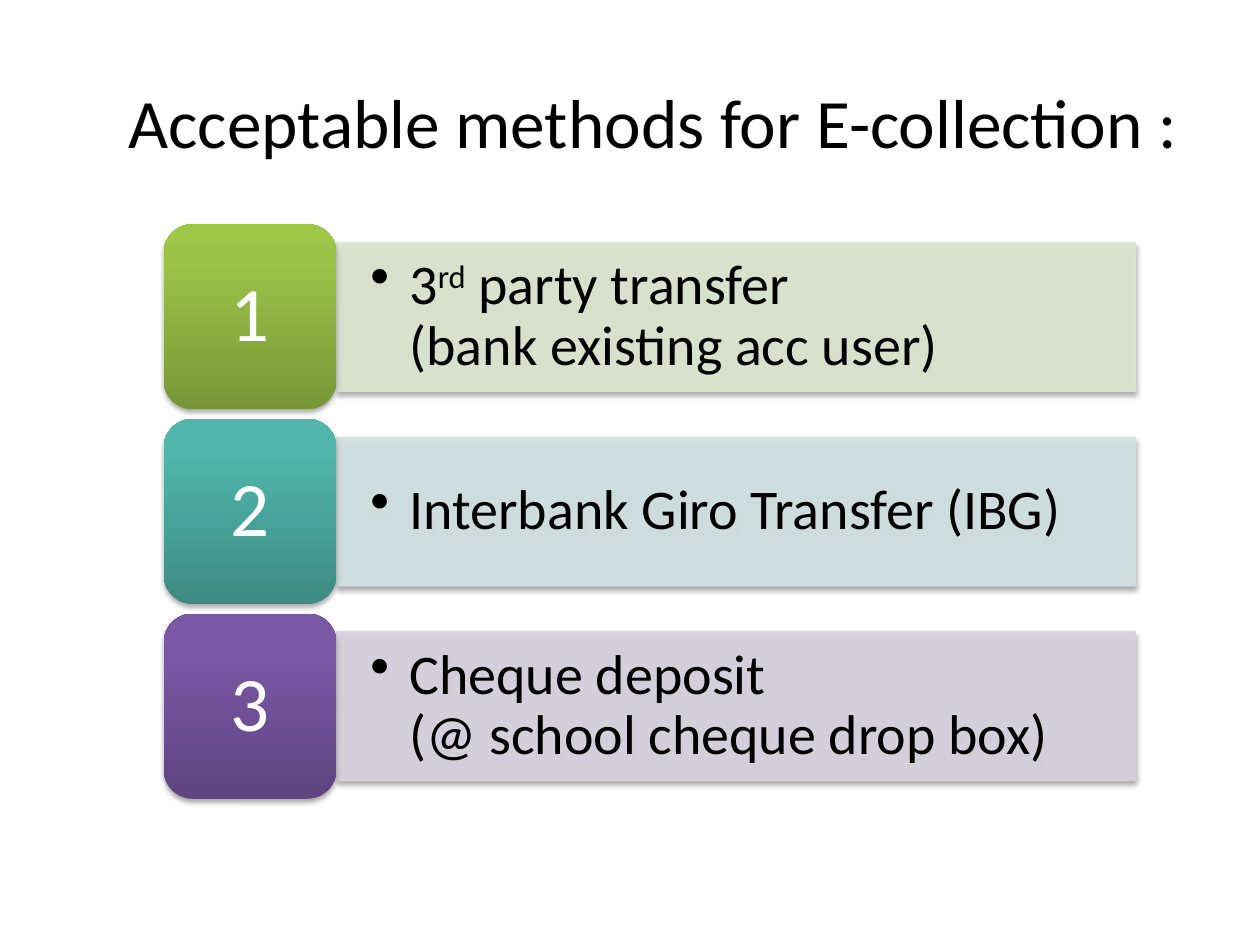
from pptx import Presentation
from pptx.dml.color import RGBColor
from pptx.enum.shapes import MSO_SHAPE
from pptx.enum.text import MSO_ANCHOR, MSO_AUTO_SIZE, PP_ALIGN
from pptx.oxml import parse_xml
from pptx.oxml.ns import nsdecls, qn
from pptx.util import Inches, Pt

RECTANGLE = MSO_SHAPE.RECTANGLE
ROUNDED = MSO_SHAPE.ROUNDED_RECTANGLE
MIDDLE = MSO_ANCHOR.MIDDLE
NO_FIT = MSO_AUTO_SIZE.NONE
LEFT, CENTER = PP_ALIGN.LEFT, PP_ALIGN.CENTER

COLORS = {
    "text": "000000", "number": "FFFFFF", "shadow": "000000",
    "green bar": "DEE7D1", "teal bar": "D2E3E2", "purple bar": "D8D3E0",
}
GRADIENTS = {
    "green": ("779737", "9BC348", "9DC746"),
    "teal": ("3D8B83", "50B5AA", "4EB8AC"),
    "purple": ("5F4480", "7B58A6", "7C57A8"),
}
STOPS = (0, 80, 100)
METHODS = [
    ("green", [[("3", 0), ("rd", 30), (" party transfer", 0)],
               [("(bank existing acc user)", 0)]]),
    ("teal", [[("Interbank Giro Transfer (IBG)", 0)]]),
    ("purple", [[("Cheque deposit", 0)],
                [("(@ school cheque drop box)", 0)]]),
]
TILE_LEFT, TILE_TOP, TILE_WIDTH, TILE_HEIGHT = 1.3, 1.78, 1.37, 1.47
BAR_WIDTH, BAR_HEIGHT = 6.34, 1.18
ROW_STEP = 1.545


class SlideBuilder:
    """Holds the text style and the current page."""

    font = "Calibri"

    def __init__(self, page):
        self.page = page

    def style(self, para, size, color, align):
        para.alignment = align
        para.font.name = self.font
        para.font.size = Pt(size)
        para.font.color.rgb = RGBColor.from_string(COLORS[color])

    def title(self, text, left, top, width, height):
        box = self.page.shapes.title
        box.left, box.top = Inches(left), Inches(top)
        box.width, box.height = Inches(width), Inches(height)
        frame = box.text_frame
        frame.text = text
        frame.auto_size = NO_FIT
        frame.vertical_anchor = MIDDLE
        self.style(frame.paragraphs[0], 39.6, "text", LEFT)

    def panel(self, kind, left, top, width, height, inset_x, inset_y):
        box = self.page.shapes.add_shape(
            kind, Inches(left), Inches(top), Inches(width), Inches(height))
        frame = box.text_frame
        frame.word_wrap = True
        frame.vertical_anchor = MIDDLE
        frame.margin_left = frame.margin_right = Inches(inset_x)
        frame.margin_top = frame.margin_bottom = Inches(inset_y)
        para = frame.paragraphs[0]
        para.line_spacing = 0.9
        return box, para

    def shadow(self, box):
        box.shadow.inherit = False
        effects = box._element.spPr.find(qn("a:effectLst"))
        effects.append(parse_xml(
            f'<a:outerShdw {nsdecls("a")} blurRad="{Pt(3.1)}" dist="{Pt(1.8)}" '
            f'dir="5400000" rotWithShape="0"><a:srgbClr val="{COLORS["shadow"]}">'
            '<a:alpha val="35000"/></a:srgbClr></a:outerShdw>'))

    def bar(self, hue, lines, left, top):
        box, para = self.panel(
            RECTANGLE, left, top, BAR_WIDTH, BAR_HEIGHT, 0.27, 0.14)
        color = RGBColor.from_string(COLORS[f"{hue} bar"])
        box.fill.solid()
        box.fill.fore_color.rgb = color
        box.line.color.rgb = color
        box.line.width = Pt(0.75)
        for element in box._element.spPr.iter(qn("a:srgbClr")):
            element.append(parse_xml(f'<a:alpha {nsdecls("a")} val="90000"/>'))
        self.shadow(box)
        for index, line in enumerate(lines):
            if index:
                para.add_line_break()
            for text, baseline in line:
                span = para.add_run()
                span.text = text
                if baseline:
                    span.font._element.set("baseline", str(baseline * 1000))
        properties = para._p.get_or_add_pPr()
        properties.set("marL", str(Inches(0.31)))
        properties.set("indent", str(Inches(-0.31)))
        properties.append(parse_xml(f'<a:buChar {nsdecls("a")} char="•"/>'))
        self.style(para, 32, "text", LEFT)

    def tile(self, hue, number, left, top):
        box, para = self.panel(
            ROUNDED, left, top, TILE_WIDTH, TILE_HEIGHT, 0.18, 0.09)
        box.line.fill.background()
        stops = "".join(
            f'<a:gs pos="{stop * 1000}"><a:srgbClr val="{color}"/></a:gs>'
            for stop, color in zip(STOPS, GRADIENTS[hue]))
        box.fill.gradient()
        gradient = box._element.spPr.find(qn("a:gradFill"))
        gradient.getparent().replace(gradient, parse_xml(
            f'<a:gradFill {nsdecls("a")} rotWithShape="1"><a:gsLst>{stops}</a:gsLst>'
            '<a:lin ang="16200000" scaled="0"/></a:gradFill>'))
        self.shadow(box)
        para.add_run().text = str(number)
        self.style(para, 44, "number", CENTER)


def main():
    deck = Presentation()
    deck.slide_width, deck.slide_height = Inches(10), Inches(7.5)
    builder = SlideBuilder(deck.slides.add_slide(deck.slide_layouts[5]))
    builder.title("Acceptable methods for E-collection :", 0.92, 0.33, 8.83, 1.25)
    for row, (hue, lines) in enumerate(METHODS):
        top = TILE_TOP + row * ROW_STEP
        bar_top = top + (TILE_HEIGHT - BAR_HEIGHT) / 2
        builder.bar(hue, lines, TILE_LEFT + TILE_WIDTH, bar_top)
        builder.tile(hue, row + 1, TILE_LEFT, top)
    deck.save("out.pptx")


if __name__ == "__main__":
    main()
